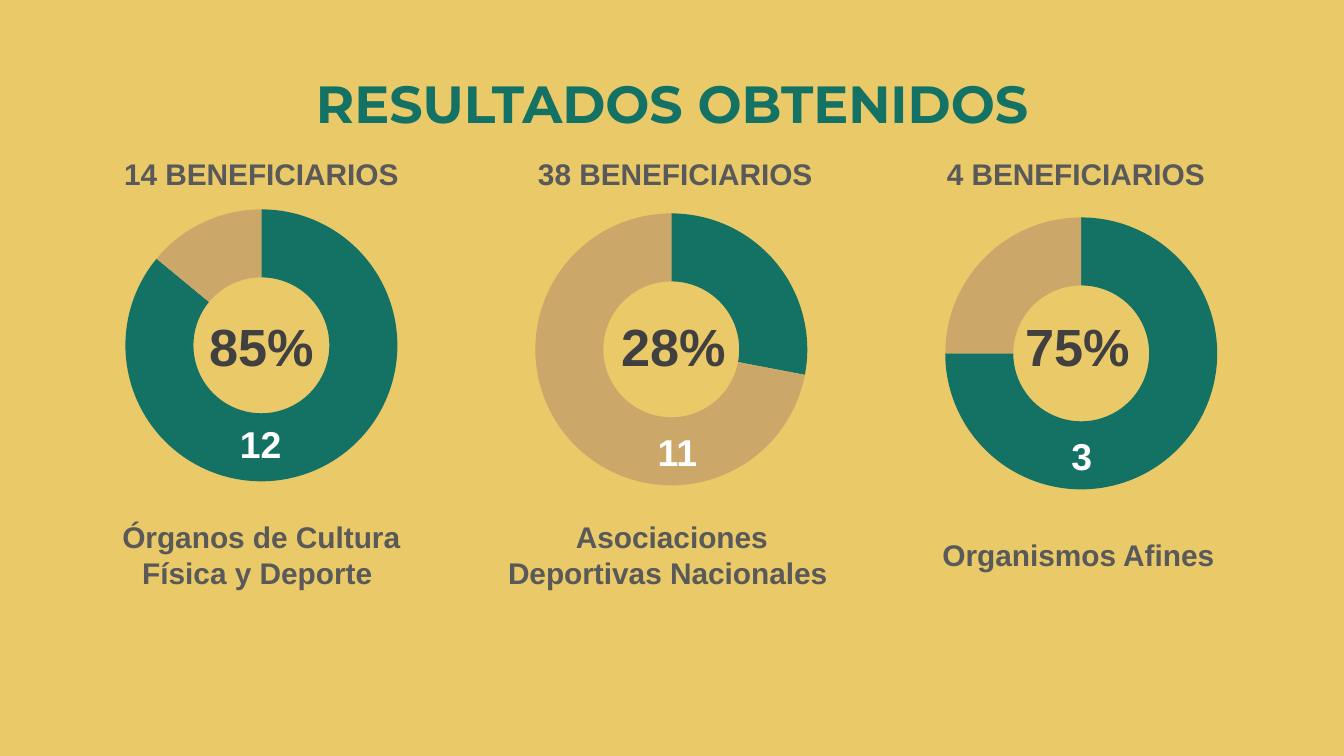
"""Build the slide of results with three doughnut charts of beneficiaries."""
from dataclasses import dataclass

from pptx import Presentation as new_presentation
from pptx.chart.data import CategoryChartData
from pptx.dml.color import RGBColor
from pptx.enum.chart import XL_CHART_TYPE as ChartType
from pptx.enum.text import MSO_ANCHOR as Anchor, PP_ALIGN as Align
from pptx.slide import Slide
from pptx.util import Inches, Pt


@dataclass(frozen=True)
class Theme:
    background: str = "EAC968"
    reached: str = "147265"
    remaining: str = "CCA76A"
    label: str = "595959"
    percent: str = "404040"
    count: str = "FFFFFF"
    chart_text: str = "000000"
    heading_font: str = "Montserrat"
    body_font: str = "Arial"
    chart_font: str = "Calibri"
    heading_size: int = 28
    label_size: int = 16
    count_size: int = 20
    chart_size: int = 10


@dataclass(frozen=True)
class Box:
    left: float
    top: float
    width: float
    height: float

    def lengths(self) -> tuple:
        return tuple(Inches(side) for side in (self.left, self.top, self.width, self.height))


@dataclass(frozen=True)
class Result:
    beneficiaries: str
    percent: str
    count: str
    group: str
    share: int
    chart_left: float
    chart_top: float
    beneficiaries_left: float
    percent_left: float
    count_left: float
    count_top: float
    group_left: float
    group_width: float


THEME = Theme()

RESULTS = (
    Result("14 BENEFICIARIOS", "85%", "12", "Órganos de Cultura Física y Deporte ",
           86, 0.22, 1.42, 0.75, 1.31, 1.66, 3.08, 0.75, 2.39),
    Result("38 BENEFICIARIOS", "28%", "11", "Asociaciones Deportivas Nacionales ",
           28, 3.27, 1.45, 3.83, 4.37, 4.76, 3.14, 3.67, 2.66),
    Result("4 BENEFICIARIOS", "75%", "3", "Organismos Afines ",
           75, 6.32, 1.48, 6.81, 7.38, 7.77, 3.17, 6.86, 2.39),
)


def add_text(slide: Slide, text: str, box: Box, size: int, color: str,
             font_name: str = THEME.body_font) -> None:
    """Add a bold, centred text in a box."""
    frame = slide.shapes.add_textbox(*box.lengths()).text_frame
    frame.word_wrap = True
    frame.vertical_anchor = Anchor.MIDDLE
    frame.text = text
    paragraph = frame.paragraphs[0]
    paragraph.alignment = Align.CENTER
    font = paragraph.runs[0].font
    font.name, font.size, font.bold = font_name, Pt(size), True
    font.color.rgb = RGBColor.from_string(color)


def add_doughnut(slide: Slide, share: int, box: Box) -> None:
    """Add a doughnut chart of the share reached and the share remaining."""
    data = CategoryChartData()
    data.categories = ["1", "2", "3", "4"]
    data.add_series("Series 1", (share, 100 - share, None, None))
    chart = slide.shapes.add_chart(ChartType.DOUGHNUT, *box.lengths(), data).chart
    chart.has_legend = False
    chart.has_title = False
    chart.font.name, chart.font.size = THEME.chart_font, Pt(THEME.chart_size)
    chart.font.color.rgb = RGBColor.from_string(THEME.chart_text)
    plot = chart.plots[0]
    plot.vary_by_categories = True
    plot.has_data_labels = False
    colors = (THEME.reached, THEME.remaining, THEME.reached, THEME.reached)
    for index, color in enumerate(colors):
        point_format = plot.series[0].points[index].format
        point_format.fill.solid()
        point_format.fill.fore_color.rgb = RGBColor.from_string(color)
        point_format.line.fill.background()


def add_result(slide: Slide, result: Result) -> None:
    """Add one doughnut with its four labels."""
    add_doughnut(slide, result.share, Box(result.chart_left, result.chart_top, 3.45, 2.3))
    add_text(slide, result.group, Box(result.group_left, 3.78, result.group_width, 0.69),
             THEME.label_size, THEME.label)
    add_text(slide, result.percent, Box(result.percent_left, 2.05, 1.28, 1.04),
             THEME.heading_size, THEME.percent)
    add_text(slide, result.count, Box(result.count_left, result.count_top, 0.56, 0.44),
             THEME.count_size, THEME.count)
    add_text(slide, result.beneficiaries, Box(result.beneficiaries_left, 0.95, 2.39, 0.69),
             THEME.label_size, THEME.label)


def main() -> None:
    """Build and save the presentation."""
    presentation = new_presentation()
    presentation.slide_width = Inches(10)
    presentation.slide_height = Inches(10 * 9 / 16)
    slide = presentation.slides.add_slide(presentation.slide_layouts[6])
    slide.background.fill.solid()
    slide.background.fill.fore_color.rgb = RGBColor.from_string(THEME.background)
    add_text(slide, "RESULTADOS OBTENIDOS", Box(0.75, 0.16, 8.5, 1.21),
             THEME.heading_size, THEME.reached, THEME.heading_font)
    for result in RESULTS:
        add_result(slide, result)
    presentation.save("out.pptx")


if __name__ == "__main__":
    main()
